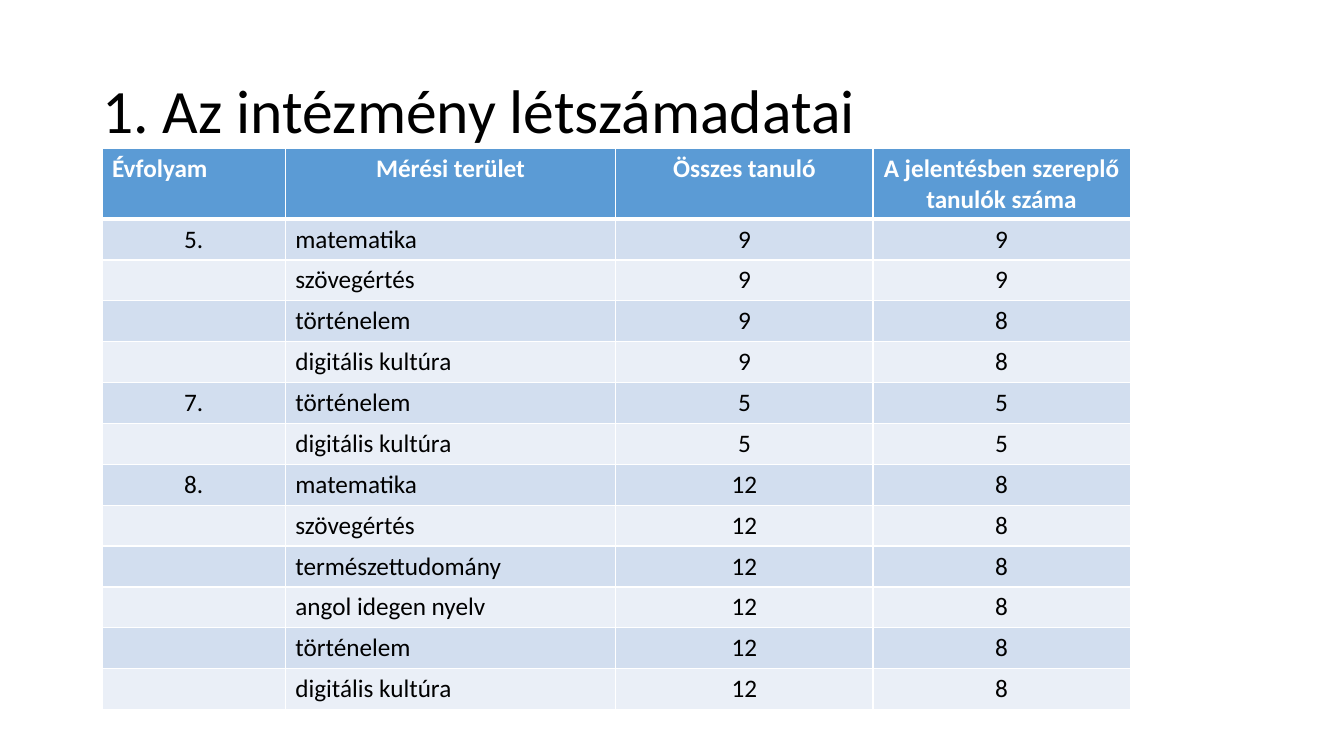
"""Builds a slide with a table of pupil numbers by grade and subject."""
from lxml import etree
from pptx import Presentation
from pptx.dml.color import RGBColor
from pptx.enum.text import MSO_ANCHOR, PP_ALIGN
from pptx.oxml.ns import qn
from pptx.util import Cm, Pt

LEFT, CENTER = PP_ALIGN.LEFT, PP_ALIGN.CENTER
MIDDLE = MSO_ANCHOR.MIDDLE

TITLE = "1. Az intézmény létszámadatai"
HEADERS = ["Évfolyam", "Mérési terület", "Összes tanuló",
           "A jelentésben szereplő tanulók száma"]
GRADES = [
    ("5.", [("matematika", 9, 9), ("szövegértés", 9, 9),
            ("történelem", 9, 8), ("digitális kultúra", 9, 8)]),
    ("7.", [("történelem", 5, 5), ("digitális kultúra", 5, 5)]),
    ("8.", [("matematika", 12, 8), ("szövegértés", 12, 8),
            ("természettudomány", 12, 8), ("angol idegen nyelv", 12, 8),
            ("történelem", 12, 8), ("digitális kultúra", 12, 8)]),
]
HEADER_ALIGNS = [LEFT, CENTER, CENTER, CENTER]
BODY_ALIGNS = [CENTER, LEFT, CENTER, CENTER]

THEME = {
    "font": "Calibri", "title_size": 44, "table_size": 18,
    "text": "000000", "header_text": "FFFFFF", "header": "5B9BD5",
    "bands": ["D2DEEF", "EAEFF7"], "border": "FFFFFF",
    "thin": 1, "thick": 3,
}
SLIDE_SIZE = (33.87, 19.05)
TITLE_BOX = (2.33, 1.01, 29.21, 3.68)
TABLE_LEFT, TABLE_TOP = 2.57, 3.74
COLUMN_WIDTHS = [4.62, 8.33, 6.48, 6.48]
HEADER_HEIGHT, ROW_HEIGHT = 1.78, 1.03


def write_text(frame, text, size=THEME["table_size"], color=THEME["text"],
               bold=False, align=LEFT, line_spacing=None):
    """Writes one formatted paragraph into a text frame."""
    paragraph = frame.paragraphs[0]
    paragraph.alignment = align
    paragraph.line_spacing = line_spacing
    font = paragraph.font
    if text:
        run = paragraph.add_run()
        run.text = text
        font = run.font
    font.name = THEME["font"]
    font.size = Pt(size)
    font.bold = bold
    font.color.rgb = RGBColor.from_string(color)


def set_borders(cell, top, bottom):
    """Draws the four borders of a cell, before its fill."""
    properties = cell._tc.get_or_add_tcPr()
    thin = THEME["thin"]
    sides = [("a:lnL", thin), ("a:lnR", thin), ("a:lnT", top), ("a:lnB", bottom)]
    for position, (tag, width) in enumerate(sides):
        line = etree.Element(qn(tag), w=str(Pt(width)))
        fill = etree.SubElement(line, qn("a:solidFill"))
        etree.SubElement(fill, qn("a:srgbClr"), val=THEME["border"])
        properties.insert(position, line)


def add_title(slide):
    """Adds the slide title."""
    box = slide.shapes.add_textbox(*map(Cm, TITLE_BOX))
    box.text_frame.word_wrap = True
    box.text_frame.vertical_anchor = MIDDLE
    write_text(box.text_frame, TITLE, size=THEME["title_size"], line_spacing=0.9)


def add_pupil_table(slide):
    """Adds the table, naming each grade only on its first row."""
    rows = [HEADERS]
    for grade, subjects in GRADES:
        for index, (subject, total, reported) in enumerate(subjects):
            rows.append(["" if index else grade, subject, str(total), str(reported)])
    height = HEADER_HEIGHT + ROW_HEIGHT * (len(rows) - 1)
    table = slide.shapes.add_table(
        len(rows), len(HEADERS), Cm(TABLE_LEFT), Cm(TABLE_TOP),
        Cm(sum(COLUMN_WIDTHS)), Cm(height)).table
    for column, width in zip(table.columns, COLUMN_WIDTHS):
        column.width = Cm(width)

    for row_index, values in enumerate(rows):
        is_header = row_index == 0
        table.rows[row_index].height = Cm(HEADER_HEIGHT if is_header else ROW_HEIGHT)
        fill = THEME["header"] if is_header else THEME["bands"][(row_index - 1) % 2]
        color = THEME["header_text"] if is_header else THEME["text"]
        aligns = HEADER_ALIGNS if is_header else BODY_ALIGNS
        top = THEME["thick"] if row_index == 1 else THEME["thin"]
        bottom = THEME["thick"] if is_header else THEME["thin"]
        for column_index, value in enumerate(values):
            cell = table.cell(row_index, column_index)
            cell.fill.solid()
            cell.fill.fore_color.rgb = RGBColor.from_string(fill)
            set_borders(cell, top, bottom)
            write_text(cell.text_frame, value, color=color, bold=is_header,
                       align=aligns[column_index])


def main():
    """Builds and saves the presentation."""
    presentation = Presentation()
    presentation.slide_width, presentation.slide_height = map(Cm, SLIDE_SIZE)
    slide = presentation.slides.add_slide(presentation.slide_layouts[6])
    add_title(slide)
    add_pupil_table(slide)
    presentation.save("out.pptx")


if __name__ == "__main__":
    main()
